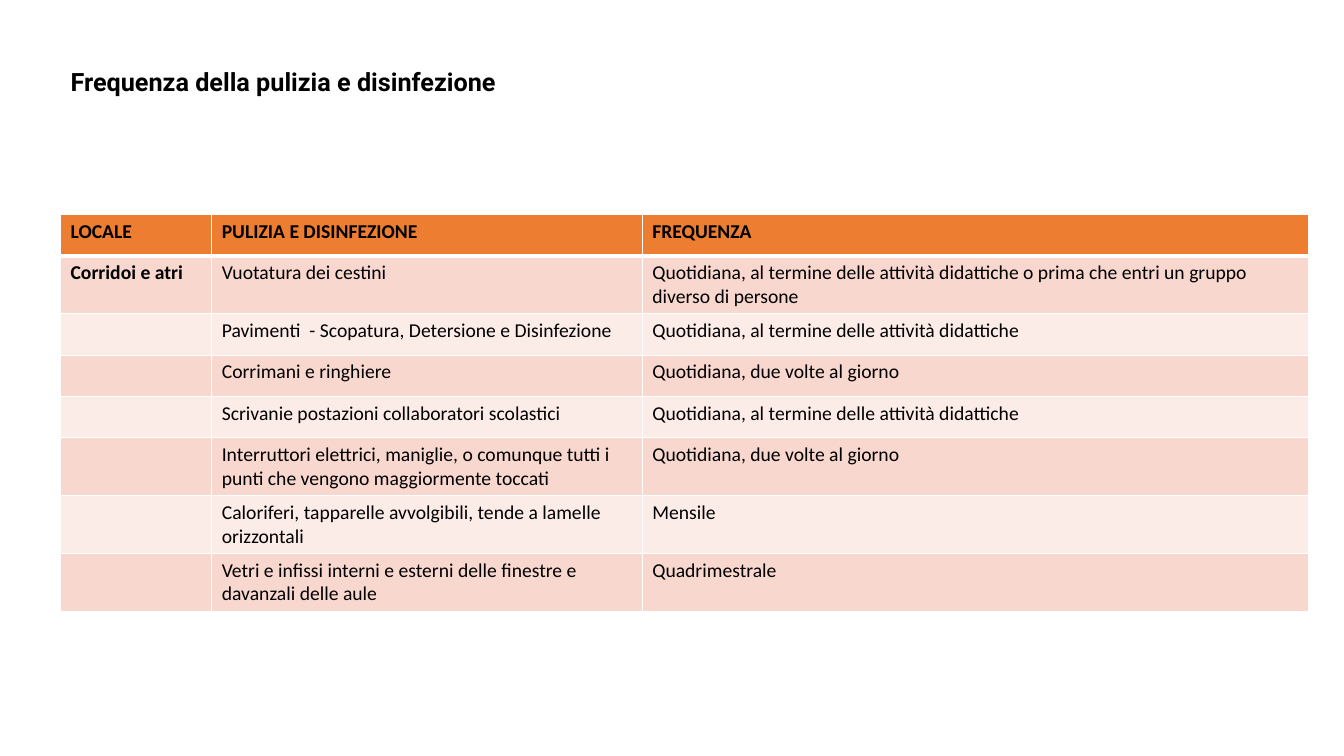
import pptx
import pptx.dml.color
import pptx.enum.text
import pptx.oxml
import pptx.oxml.ns
import pptx.util
from pptx.util import Inches

HEADER_FILL = "ED7D31"
BAND_FILLS = ("F8D7CE", "FCECE8")
COLUMN_WIDTHS = (1.5, 4.27, 6.61)
ROW_HEIGHT = 0.41
TWO_LINE_HEIGHT = 0.57
TWO_LINE_ROWS = (1, 5, 6, 7)
END_OF_LESSONS = "Quotidiana, al termine delle attività didattiche"
TWICE_A_DAY = "Quotidiana, due volte al giorno"
CLEANING_ROWS = [
    ("LOCALE", "PULIZIA E DISINFEZIONE", "FREQUENZA"),
    ("Corridoi e atri", "Vuotatura dei cestini",
     END_OF_LESSONS + " o prima che entri un gruppo diverso di persone"),
    ("", "Pavimenti  - Scopatura, Detersione e Disinfezione", END_OF_LESSONS),
    ("", "Corrimani e ringhiere", TWICE_A_DAY),
    ("", "Scrivanie postazioni collaboratori scolastici", END_OF_LESSONS),
    ("", "Interruttori elettrici, maniglie, o comunque tutti i punti "
         "che vengono maggiormente toccati", TWICE_A_DAY),
    ("", "Caloriferi, tapparelle avvolgibili, tende a lamelle orizzontali", "Mensile"),
    ("", "Vetri e infissi interni e esterni delle finestre e davanzali delle aule",
     "Quadrimestrale"),
]


def color(value):
    """Return the colour for a hex string."""
    return pptx.dml.color.RGBColor.from_string(value)


def format_text(paragraph, font_name, size, bold):
    """Format every run of a paragraph in black."""
    for run in paragraph.runs:
        run.font.name = font_name
        run.font.size = pptx.util.Pt(size)
        run.font.bold = bold
        run.font.color.rgb = color("000000")


def set_borders(cell, top, bottom):
    """Give a cell white borders, with top and bottom widths in points."""
    properties = cell._tc.get_or_add_tcPr()
    for side, width in (("L", 1), ("R", 1), ("T", top), ("B", bottom)):
        properties.append(pptx.oxml.parse_xml(
            f'<a:ln{side} {pptx.oxml.ns.nsdecls("a")} w="{pptx.util.Pt(width)}">'
            '<a:solidFill><a:srgbClr val="FFFFFF"/></a:solidFill>'
            f'</a:ln{side}>'))


def add_title(slide, left, top, width, height):
    """Place the slide title in the given box."""
    title = slide.shapes.title
    title.left, title.top = Inches(left), Inches(top)
    title.width, title.height = Inches(width), Inches(height)
    text_frame = title.text_frame
    text_frame.text = "Frequenza della pulizia e disinfezione"
    text_frame.word_wrap = False
    text_frame.vertical_anchor = pptx.enum.text.MSO_ANCHOR.MIDDLE
    paragraph = text_frame.paragraphs[0]
    paragraph.alignment = pptx.enum.text.PP_ALIGN.LEFT
    format_text(paragraph, "Roboto", 18, True)


def add_cleaning_table(slide, left, top, width, height):
    """Place the table of cleaning tasks and frequencies in the given box."""
    table = slide.shapes.add_table(
        len(CLEANING_ROWS), len(COLUMN_WIDTHS),
        Inches(left), Inches(top), Inches(width), Inches(height)).table
    for column, share in zip(table.columns, COLUMN_WIDTHS):
        column.width = Inches(width * share / sum(COLUMN_WIDTHS))
    for row_index, texts in enumerate(CLEANING_ROWS):
        two_lines = row_index in TWO_LINE_ROWS
        table.rows[row_index].height = Inches(TWO_LINE_HEIGHT if two_lines else ROW_HEIGHT)
        is_header = row_index == 0
        fill = HEADER_FILL if is_header else BAND_FILLS[(row_index - 1) % 2]
        for column_index, text in enumerate(texts):
            cell = table.cell(row_index, column_index)
            set_borders(cell, 3 if row_index == 1 else 1, 3 if is_header else 1)
            cell.fill.solid()
            cell.fill.fore_color.rgb = color(fill)
            cell.text_frame.text = text
            paragraph = cell.text_frame.paragraphs[0]
            if is_header and column_index != 1:
                paragraph.alignment = pptx.enum.text.PP_ALIGN.JUSTIFY
            format_text(paragraph, "Calibri", 14, is_header or column_index == 0)


def main():
    """Build and save the presentation."""
    presentation = pptx.Presentation()
    presentation.slide_width = Inches(13.33)
    presentation.slide_height = Inches(7.5)
    slide = presentation.slides.add_slide(presentation.slide_layouts.get_by_name("Title Only"))
    add_title(slide, 0.6, 0.61, 4.75, 0.4)
    add_cleaning_table(slide, 0.6, 2.13, 12.38, 3.89)
    presentation.save("out.pptx")


if __name__ == "__main__":
    main()
